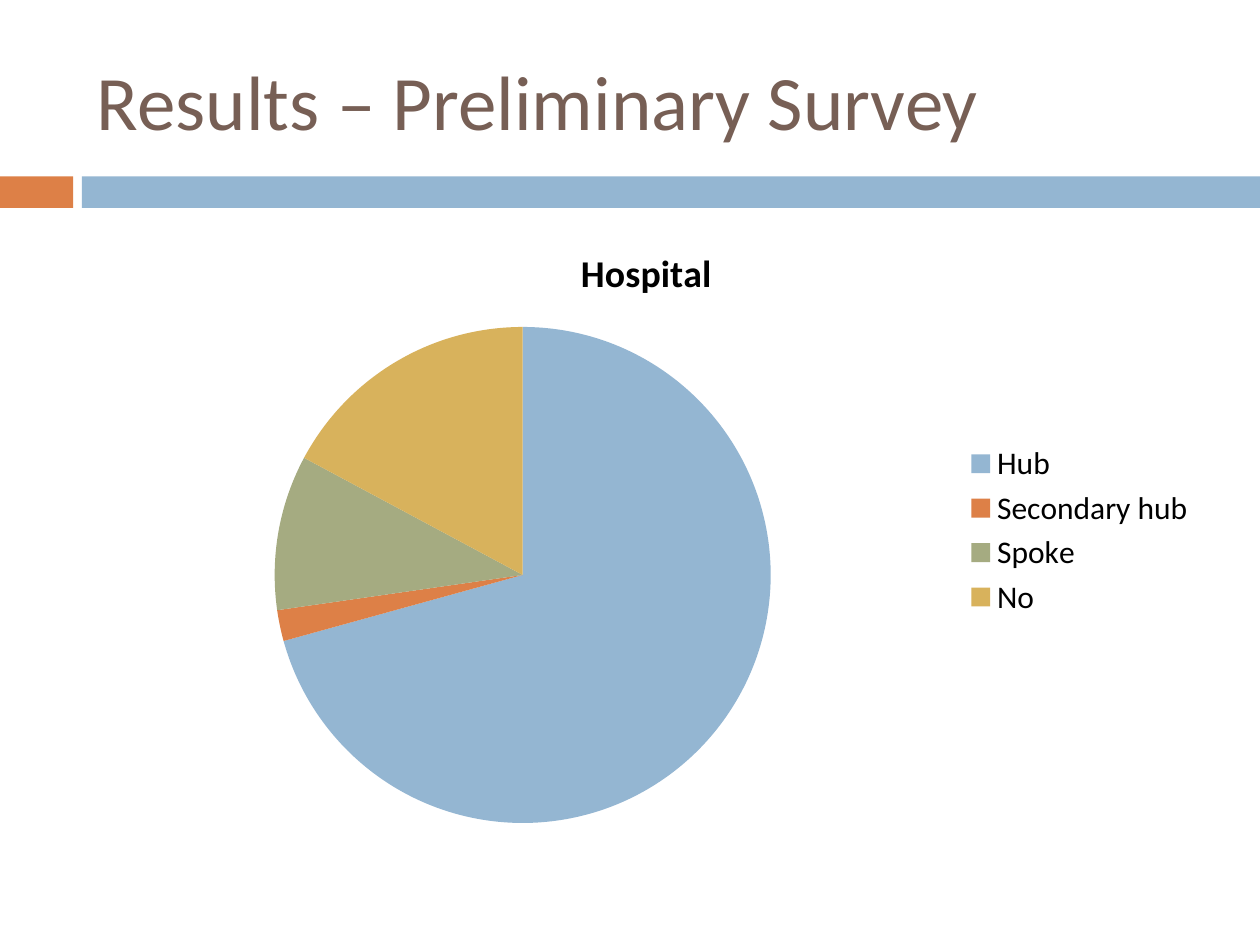
from dataclasses import dataclass

from pptx import Presentation
from pptx import util as u
from pptx.chart.data import CategoryChartData
from pptx.dml.color import RGBColor
from pptx.enum import chart as ch, shapes, text


@dataclass(frozen=True)
class Theme:
    font: str = "Calibri"
    heading: str = "775F55"
    ink: str = "000000"
    blue: str = "94B6D2"
    orange: str = "DD8047"
    green: str = "A5AB81"
    gold: str = "D8B25C"
    heading_size: float = 44
    chart_title_size: float = 21.6
    chart_size: float = 18


THEME = Theme()
HOSPITALS = {
    "Hub": (70, THEME.blue),
    "Secondary hub": (2, THEME.orange),
    "Spoke": (10, THEME.green),
    "No": (17, THEME.gold),
}


def inches(*lengths):
    return [u.Inches(length) for length in lengths]


def format_font(font, size, color, bold=False):
    values = {"name": THEME.font, "size": u.Pt(size), "bold": bold}
    for name, value in values.items():
        setattr(font, name, value)
    font.color.rgb = RGBColor.from_string(color)


def add_band(s, left, top, width, height):
    """Short accent block, a gap, then a bar to the right edge."""
    accent, gap = 0.58, 0.07
    bar = accent + gap
    for x, w, color in ((left, accent, THEME.orange),
                        (left + bar, width - bar, THEME.blue)):
        sp = s.shapes.add_shape(shapes.MSO_SHAPE.RECTANGLE,
                                *inches(x, top, w, height))
        sp.shadow.inherit = False
        sp.fill.solid()
        sp.fill.fore_color.rgb = RGBColor.from_string(color)
        sp.line.fill.background()


def add_title(s, wording, left, top, width, height):
    tf = s.shapes.add_textbox(*inches(left, top, width, height)).text_frame
    tf.word_wrap = True
    tf.vertical_anchor = text.MSO_ANCHOR.MIDDLE
    r = tf.paragraphs[0].add_run()
    r.text = wording
    format_font(r.font, THEME.heading_size, THEME.heading)


def add_pie(s, title, shares, left, top, width, height):
    data = CategoryChartData()
    data.categories = list(shares)
    data.add_series(title, [value for value, _ in shares.values()])
    chart = s.shapes.add_chart(ch.XL_CHART_TYPE.PIE,
                               *inches(left, top, width, height), data).chart
    format_font(chart.font, THEME.chart_size, THEME.ink)

    # Chart title
    chart.has_title = True
    chart.chart_title.include_in_layout = False
    r = chart.chart_title.text_frame.paragraphs[0].add_run()
    r.text = title
    format_font(r.font, THEME.chart_title_size, THEME.ink, bold=True)

    # Legend
    chart.has_legend = True
    chart.legend.position = ch.XL_LEGEND_POSITION.RIGHT
    chart.legend.include_in_layout = False

    # Slices
    plot = chart.plots[0]
    plot.vary_by_categories = True
    for i, (_, color) in enumerate(shares.values()):
        fill = plot.series[0].points[i].format.fill
        fill.solid()
        fill.fore_color.rgb = RGBColor.from_string(color)


def main():
    prs = Presentation()
    prs.slide_width, prs.slide_height = inches(10, 7.5)
    s = prs.slides.add_slide(prs.slide_layouts[6])
    add_band(s, 0, 1.4, 10, 0.25)
    add_title(s, "Results – Preliminary Survey", 0.67, 0.25, 8.92, 1.08)
    add_pie(s, "Hospital", HOSPITALS, 0.67, 1.75, 8.92, 4.92)
    prs.save("out.pptx")


if __name__ == "__main__":
    main()
